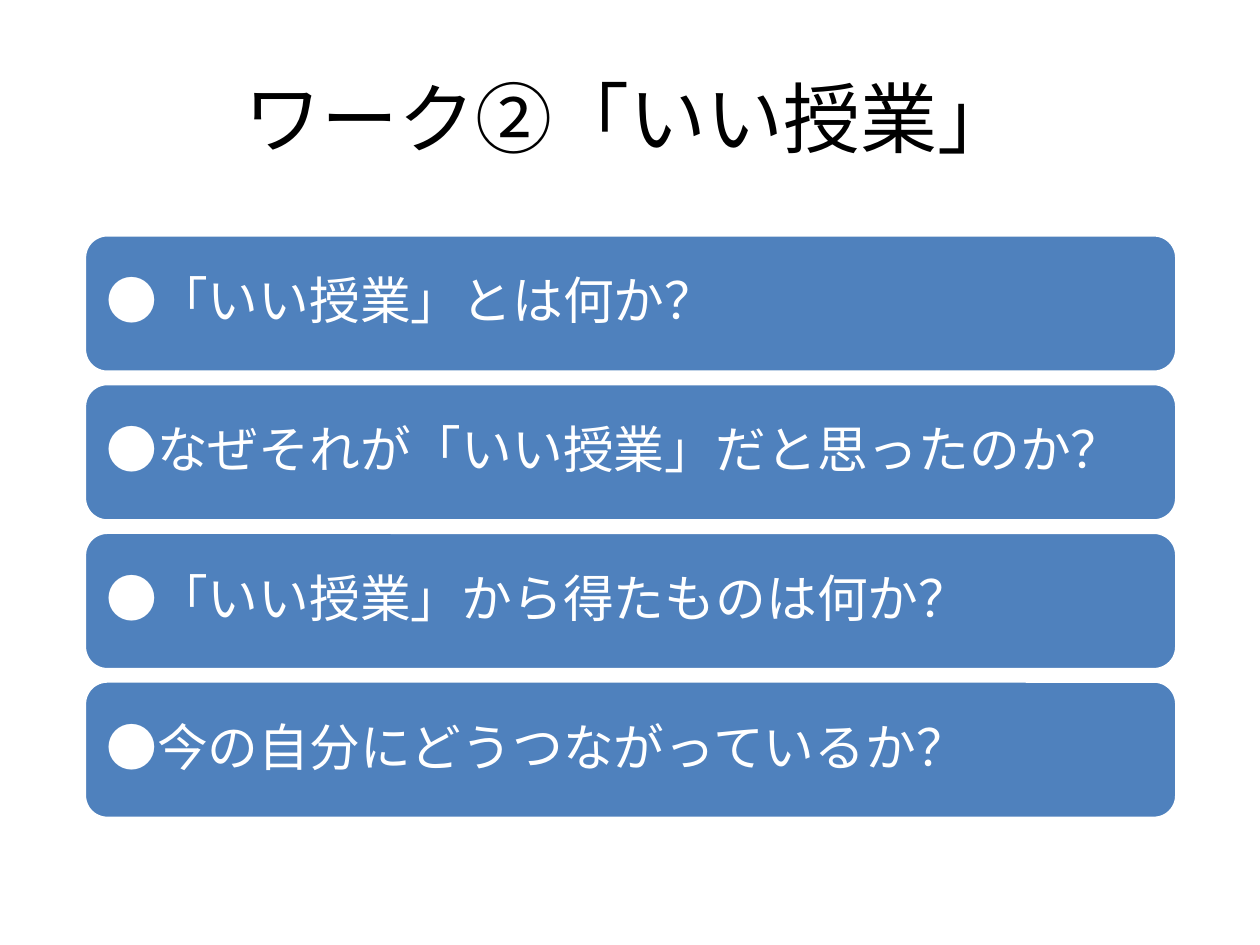
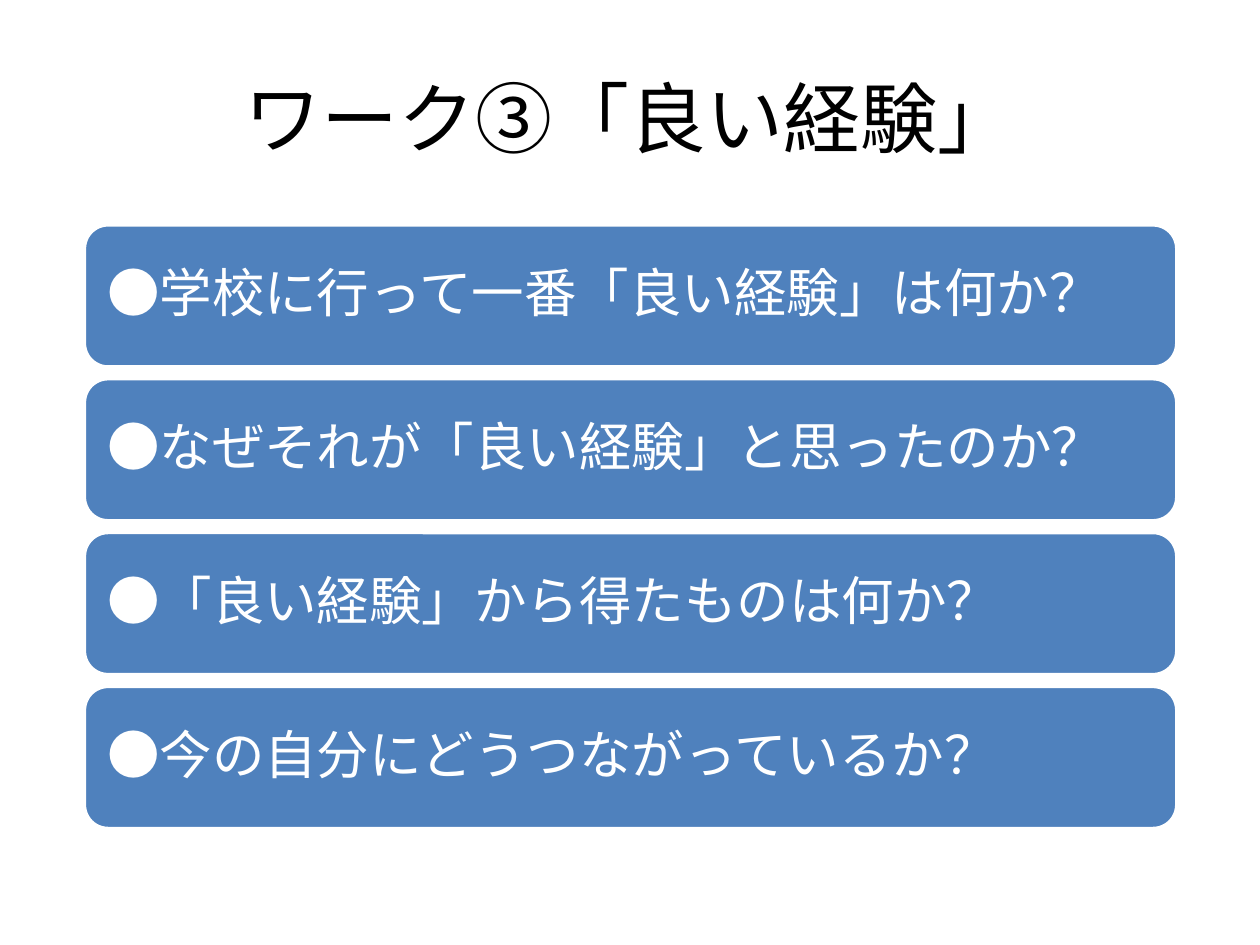
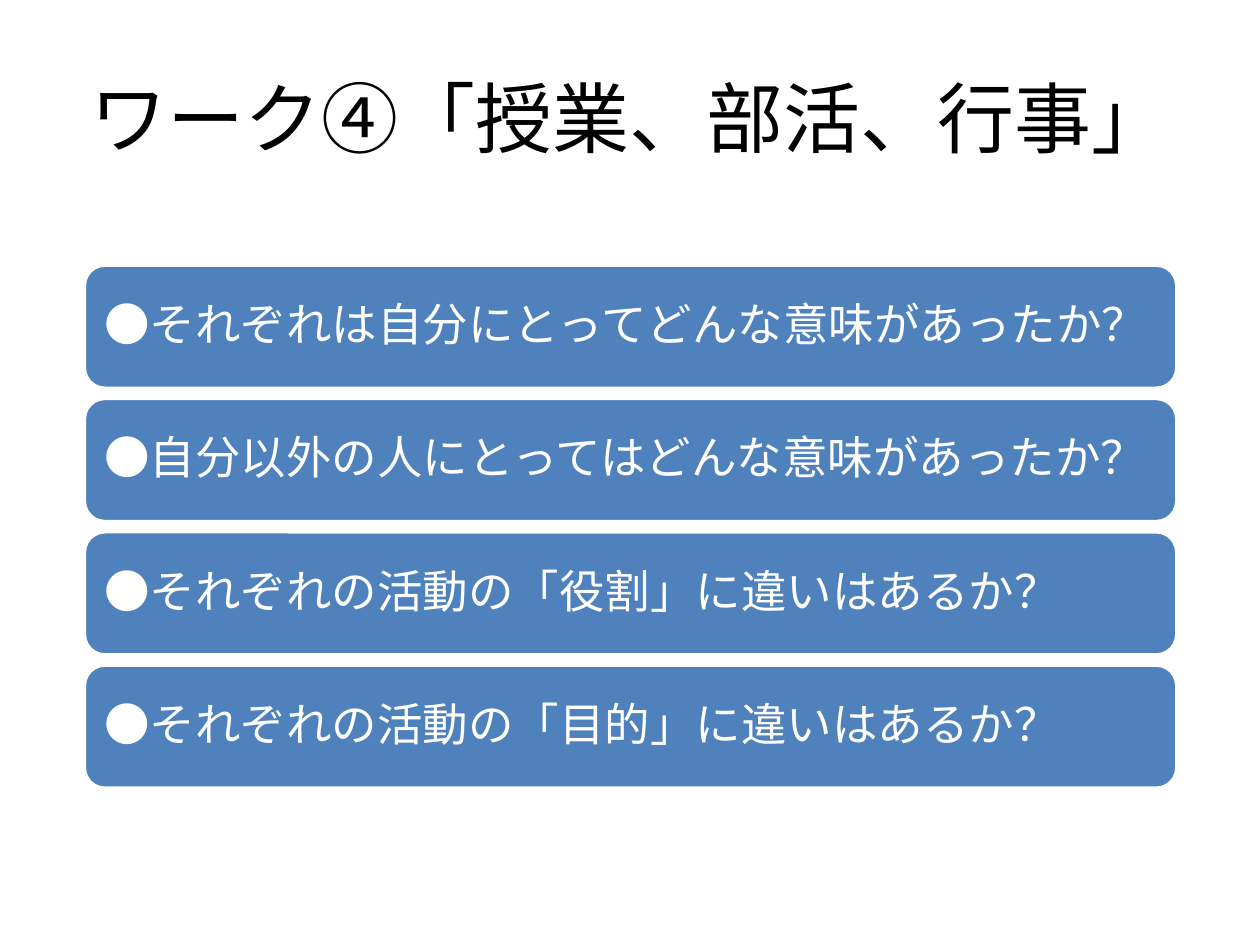
from pptx import Presentation
from pptx.dml.color import RGBColor
from pptx.enum.shapes import MSO_SHAPE
from pptx.enum.text import MSO_ANCHOR, PP_ALIGN
from pptx.util import Inches, Pt

# Shared look
FONT = "Cabin"
BLACK, WHITE, BLUE = "000000", "FFFFFF", "4F81BD"
TITLE_SIZE = 44

# Shared layout, in inches; bar measures follow from the question text size
BAR_LEFT, BAR_WIDTH = 0.67, 8.67
STACK_MIDDLE = 4.18
BAR_HEIGHT_PER_100_POINTS = 3.76
GAP_PER_100_POINTS = 0.31

# Title, question size in points, questions
WORKSHEETS = [
    ("ワーク②「いい授業」", 29, [
        "●「いい授業」とは何か？",
        "●なぜそれが「いい授業」だと思ったのか？",
        "●「いい授業」から得たものは何か？",
        "●今の自分にどうつながっているか？",
    ]),
    ("ワーク③「良い経験」", 30, [
        "●学校に行って一番「良い経験」は何か？",
        "●なぜそれが「良い経験」と思ったのか？",
        "●「良い経験」から得たものは何か？",
        "●今の自分にどうつながっているか？",
    ]),
    ("ワーク④「授業、部活、行事」", 26, [
        "●それぞれは自分にとってどんな意味があったか？",
        "●自分以外の人にとってはどんな意味があったか？",
        "●それぞれの活動の「役割」に違いはあるか？",
        "●それぞれの活動の「目的」に違いはあるか？",
    ]),
]


def color(hex_value):
    return RGBColor.from_string(hex_value)


def set_attributes(target, values):
    for name, value in values.items():
        setattr(target, name, value)


def write_text(shape, text, size, hex_color, frame_format, paragraph_format):
    """Put one formatted paragraph into a shape, centred vertically."""
    frame = shape.text_frame
    set_attributes(frame, {"word_wrap": True,
                           "vertical_anchor": MSO_ANCHOR.MIDDLE,
                           **frame_format})
    paragraph = frame.paragraphs[0]
    set_attributes(paragraph, paragraph_format)
    run = paragraph.add_run()
    run.text = text
    set_attributes(run.font, {"name": FONT, "size": Pt(size)})
    run.font.color.rgb = color(hex_color)


def add_title(slide, text):
    box = slide.shapes.add_textbox(Inches(0.5), Inches(0.3),
                                   Inches(9), Inches(1.25))
    write_text(box, text, TITLE_SIZE, BLACK, {},
               {"alignment": PP_ALIGN.CENTER})


def add_question_bar(slide, text, size, top, height):
    bar = slide.shapes.add_shape(MSO_SHAPE.ROUNDED_RECTANGLE,
                                 Inches(BAR_LEFT), Inches(top),
                                 Inches(BAR_WIDTH), Inches(height))
    bar.shadow.inherit = False
    bar.fill.solid()
    bar.fill.fore_color.rgb = color(BLUE)
    bar.line.color.rgb = color(WHITE)
    bar.line.width = Pt(2)
    margins = {f"margin_{side}": Pt(0.3 * size)
               for side in ("left", "top", "right", "bottom")}
    write_text(bar, text, size, WHITE, margins,
               {"alignment": PP_ALIGN.LEFT, "line_spacing": 0.9,
                "space_after": Pt(0.35 * size)})


def add_question_stack(slide, questions, size):
    """Stack equal bars around the shared middle line."""
    height = BAR_HEIGHT_PER_100_POINTS * size / 100
    gap = GAP_PER_100_POINTS * size / 100
    pitch = height + gap
    first_top = STACK_MIDDLE - (len(questions) * pitch - gap) / 2
    for index, question in enumerate(questions):
        add_question_bar(slide, question, size,
                         first_top + index * pitch, height)


def main():
    presentation = Presentation()
    set_attributes(presentation, {"slide_width": Inches(10),
                                  "slide_height": Inches(7.5)})
    blank_layout = presentation.slide_layouts[6]
    for title, size, questions in WORKSHEETS:
        slide = presentation.slides.add_slide(blank_layout)
        add_title(slide, title)
        add_question_stack(slide, questions, size)
    presentation.save("out.pptx")


if __name__ == "__main__":
    main()
